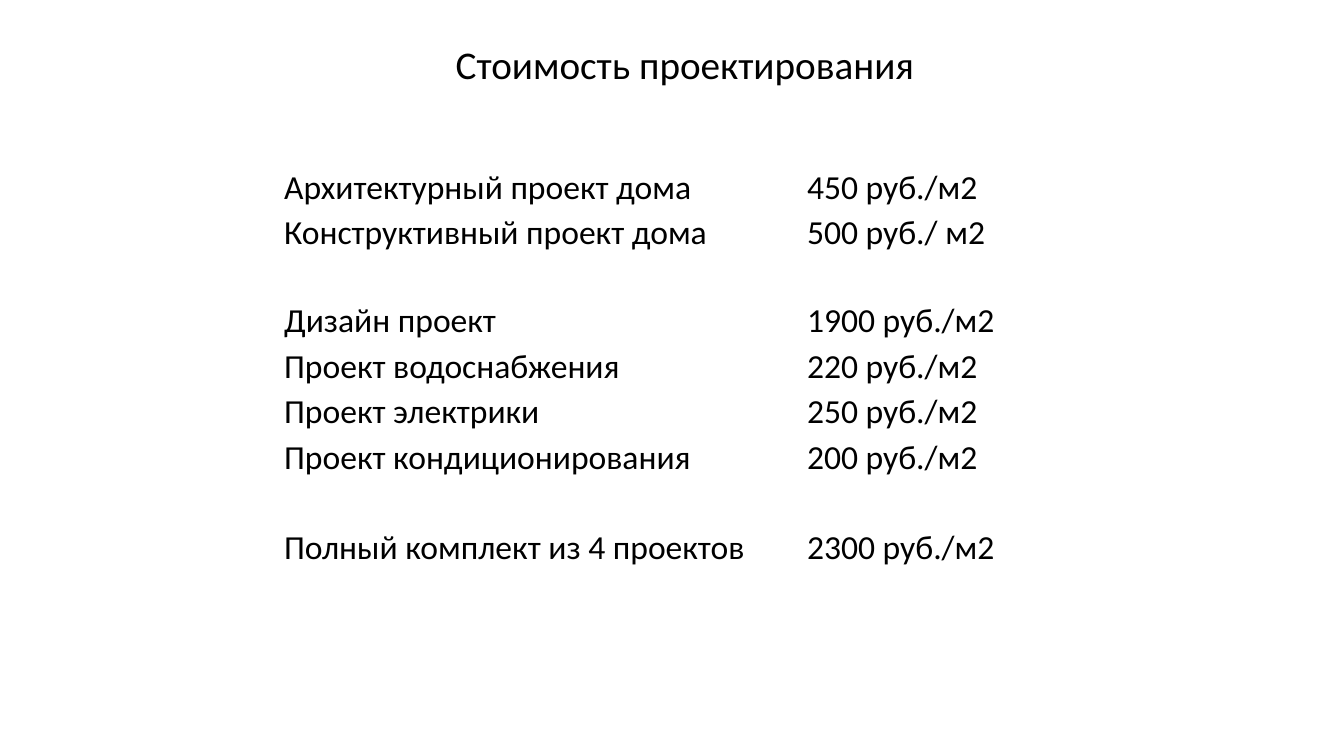
from pptx import Presentation
from pptx.dml.color import RGBColor
from pptx.enum import text
from pptx.util import Cm, Pt

TITLE = "Стоимость проектирования"
PRICES = [
    ("Архитектурный проект дома", "450 руб./м2"),
    ("Конструктивный проект дома", "500 руб./ м2"),
    ("", ""),
    ("Дизайн проект", "1900 руб./м2"),
    ("Проект водоснабжения", "220 руб./м2"),
    ("Проект электрики", "250 руб./м2"),
    ("Проект кондиционирования", "200 руб./м2"),
    ("", ""),
    ("Полный комплект из 4 проектов", "2300 руб./м2"),
]
COLUMNS = (13.18, 7.62)
ROW = 1.145
SHORT_ROWS = {3: 1.07}
FONT = "Calibri"
INK = "000000"


def color(value):
    return RGBColor.from_string(value)


def format_runs(tf, size):
    for p in tf.paragraphs:
        for r in p.runs:
            r.font.name = FONT
            r.font.size = Pt(size)
            r.font.bold = False
            r.font.color.rgb = color(INK)


def add_title(s):
    sp = s.shapes.title
    sp.left, sp.top, sp.width, sp.height = Cm(5.83), Cm(0), Cm(22.86), Cm(3.38)
    tf = sp.text_frame
    tf.text = TITLE
    tf.word_wrap = True
    tf.vertical_anchor = text.MSO_ANCHOR.MIDDLE
    p = tf.paragraphs[0]
    p.alignment = text.PP_ALIGN.CENTER
    p.line_spacing = 0.9
    format_runs(tf, 28)


def add_prices(s):
    heights = [SHORT_ROWS.get(i, ROW) for i in range(len(PRICES))]
    frame = s.shapes.add_table(len(PRICES), len(COLUMNS), Cm(7.14), Cm(4.11),
                               Cm(sum(COLUMNS)), Cm(sum(heights)))
    table = frame.table
    table.first_row = table.horz_banding = False
    for column, width in zip(table.columns, COLUMNS):
        column.width = Cm(width)
    for row, height, values in zip(table.rows, heights, PRICES):
        row.height = Cm(height)
        for cell, value in zip(row.cells, values):
            cell.fill.background()
            cell.margin_left = cell.margin_right = cell.margin_top = Cm(0.02)
            cell.margin_bottom = Cm(0)
            cell.vertical_anchor = text.MSO_ANCHOR.BOTTOM
            if value:
                cell.text_frame.text = value
                format_runs(cell.text_frame, 24)


def main():
    prs = Presentation()
    prs.slide_width, prs.slide_height = Cm(33.87), Cm(19.05)
    s = prs.slides.add_slide(prs.slide_layouts[5])
    add_title(s)
    add_prices(s)
    prs.save("out.pptx")


if __name__ == "__main__":
    main()
